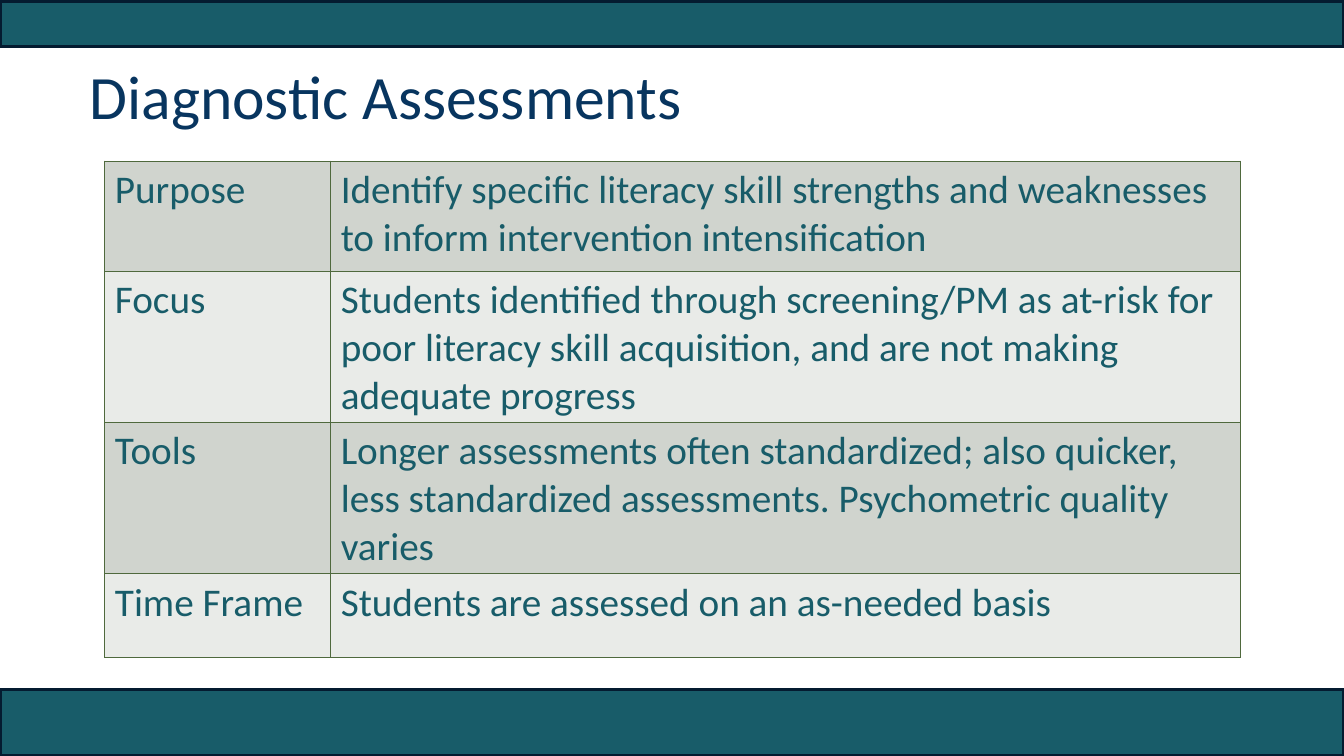
from dataclasses import dataclass

from pptx import Presentation
from pptx import util as u
from pptx.dml.color import RGBColor
from pptx.enum import shapes, text
from pptx.oxml import parse_xml
from pptx.oxml.ns import nsdecls

TEAL = RGBColor(0x18, 0x5C, 0x69)
DARK_NAVY = RGBColor(0x04, 0x1B, 0x30)
NAVY = RGBColor(0x08, 0x35, 0x5F)
GREEN = RGBColor(0x4F, 0x69, 0x3D)
ROW_FILLS = (RGBColor(0xD0, 0xD4, 0xCE), RGBColor(0xE9, 0xEB, 0xE8))


@dataclass
class Band:
    top: float
    height: float


@dataclass
class AssessmentRow:
    label: str
    detail: str
    height: float


BANDS = [Band(6.84, 0.66), Band(0.01, 0.45)]
COLUMN_WIDTHS = (2.24, 9.02)
ROWS = [
    AssessmentRow("Purpose", "Identify specific literacy skill strengths and weaknesses "
                  "to inform intervention intensification", 1.09),
    AssessmentRow("Focus", "Students identified through screening/PM as at-risk for poor "
                  "literacy skill acquisition, and are not making adequate progress", 1.41),
    AssessmentRow("Tools", "Longer assessments often standardized; also quicker, less "
                  "standardized assessments. Psychometric quality varies", 1.43),
    AssessmentRow("Time Frame", "Students are assessed on an as-needed basis", 0.83),
]


def write(tf, content: str, size: int, color: RGBColor) -> None:
    p = tf.paragraphs[0]
    r = p.add_run()
    r.text = content
    for name, value in {"name": "Calibri", "size": u.Pt(size)}.items():
        setattr(r.font, name, value)
    r.font.color.rgb = color


def draw_band(s, band: Band, width: int) -> None:
    sp = s.shapes.add_shape(shapes.MSO_SHAPE.RECTANGLE, 0, u.Inches(band.top),
                            width, u.Inches(band.height))
    sp.shadow.inherit = False
    sp.fill.solid()
    sp.fill.fore_color.rgb = TEAL
    sp.line.color.rgb = DARK_NAVY
    sp.line.width = u.Pt(2.5)


def draw_title(s, content: str) -> None:
    sp = s.shapes.add_textbox(u.Inches(0.79), u.Inches(0.61), u.Inches(11.5), u.Inches(1.45))
    tf = sp.text_frame
    for name, value in {"word_wrap": True, "vertical_anchor": text.MSO_ANCHOR.TOP}.items():
        setattr(tf, name, value)
    write(tf, content, 44, NAVY)
    tf.paragraphs[0].line_spacing = 0.9


def add_borders(cell) -> None:
    tc_pr = cell._tc.get_or_add_tcPr()
    for i, side in enumerate(("lnL", "lnR", "lnT", "lnB")):
        tc_pr.insert(i, parse_xml(
            f'<a:{side} {nsdecls("a")} w="{u.Pt(1)}"><a:solidFill>'
            f'<a:srgbClr val="{GREEN}"/></a:solidFill></a:{side}>'))


def draw_table(s, rows: list[AssessmentRow]) -> None:
    frame = s.shapes.add_table(len(rows), len(COLUMN_WIDTHS), u.Inches(1.04), u.Inches(1.6),
                               u.Inches(sum(COLUMN_WIDTHS)),
                               u.Inches(sum(row.height for row in rows)))
    table = frame.table
    for name in ("first_row", "horz_banding"):
        setattr(table, name, False)
    for column, width in zip(table.columns, COLUMN_WIDTHS):
        column.width = u.Inches(width)
    for i, row in enumerate(rows):
        table.rows[i].height = u.Inches(row.height)
        for j, content in enumerate((row.label, row.detail)):
            cell = table.cell(i, j)
            cell.fill.solid()
            cell.fill.fore_color.rgb = ROW_FILLS[i % 2]
            add_borders(cell)
            write(cell.text_frame, content, 28, TEAL)


def main() -> None:
    prs = Presentation()
    prs.slide_width, prs.slide_height = u.Inches(13.33), u.Inches(7.5)
    s = prs.slides.add_slide(prs.slide_layouts[6])
    for band in BANDS:
        draw_band(s, band, prs.slide_width)
    draw_title(s, "Diagnostic Assessments")
    draw_table(s, ROWS)
    prs.save("out.pptx")


if __name__ == "__main__":
    main()
